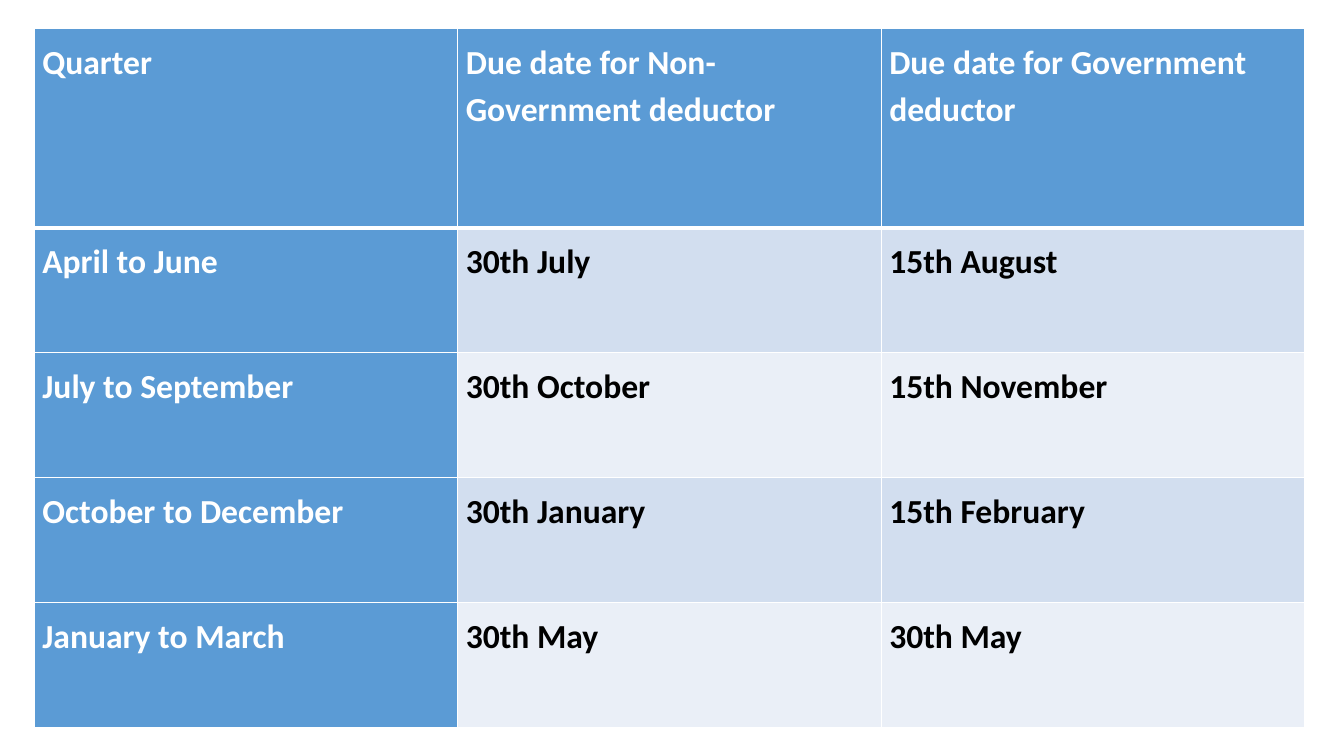
from dataclasses import dataclass

from pptx import Presentation
from pptx.dml.color import RGBColor
from pptx.oxml import parse_xml
from pptx.oxml.ns import nsdecls
from pptx.util import Inches, Pt


@dataclass(frozen=True)
class Theme:
    font: str = "Calibri"
    size: int = 24
    heading_fill: str = "5B9BD5"
    heading_text: str = "FFFFFF"
    band_fills: tuple = ("D2DEEF", "EAEFF7")
    date_text: str = "000000"
    border: str = "FFFFFF"
    thin: int = 1
    thick: int = 3


THEME = Theme()

DUE_DATES = [
    ("Quarter", "Due date for Non-Government deductor", "Due date for Government deductor"),
    ("April to June", "30th July", "15th August"),
    ("July to September", "30th October", "15th November"),
    ("October to December", "30th January", "15th February"),
    ("January to March", "30th May", "30th May"),
]


def write_text(frame, content, *, color, size=THEME.size, bold=True, spacing=1.15, gap=15):
    paragraph = frame.paragraphs[0]
    paragraph.line_spacing = spacing
    paragraph.space_before = paragraph.space_after = Pt(gap)
    run = paragraph.add_run()
    run.text = content
    run.font.name = THEME.font
    run.font.size = Pt(size)
    run.font.bold = bold
    run.font.color.rgb = RGBColor.from_string(color)


def add_borders(cell, **widths):
    properties = cell._tc.get_or_add_tcPr()
    for side in ("L", "R", "T", "B"):
        width = Pt(widths.get(side, THEME.thin))
        properties.append(parse_xml(
            f'<a:ln{side} {nsdecls("a")} w="{width}"><a:solidFill>'
            f'<a:srgbClr val="{THEME.border}"/></a:solidFill></a:ln{side}>'
        ))


def format_cell(cell, content, row, column):
    is_heading = row == 0 or column == 0
    fill = THEME.heading_fill if is_heading else THEME.band_fills[(row - 1) % 2]
    color = THEME.heading_text if is_heading else THEME.date_text
    thick_side = {0: "B", 1: "T"}.get(row)
    add_borders(cell, **({thick_side: THEME.thick} if thick_side else {}))
    cell.fill.solid()
    cell.fill.fore_color.rgb = RGBColor.from_string(fill)
    cell.margin_left = cell.margin_right = Inches(0.08)
    cell.margin_top = cell.margin_bottom = Inches(0.08)
    write_text(cell.text_frame, content, color=color)


def add_due_date_table(slide, entries):
    schedule = slide.shapes.add_table(
        len(entries), len(entries[0]),
        Inches(0.34), Inches(0.28), Inches(12.6), Inches(6.94),
    ).table
    for column in schedule.columns:
        column.width = Inches(4.2)
    for row, values in enumerate(entries):
        schedule.rows[row].height = Inches(1.24 if row else 1.98)
        for column, content in enumerate(values):
            format_cell(schedule.cell(row, column), content, row, column)


def main():
    deck = Presentation()
    deck.slide_width = Inches(13.33)
    deck.slide_height = Inches(7.5)
    slide = deck.slides.add_slide(deck.slide_layouts[6])
    add_due_date_table(slide, DUE_DATES)
    deck.save("out.pptx")


if __name__ == "__main__":
    main()
